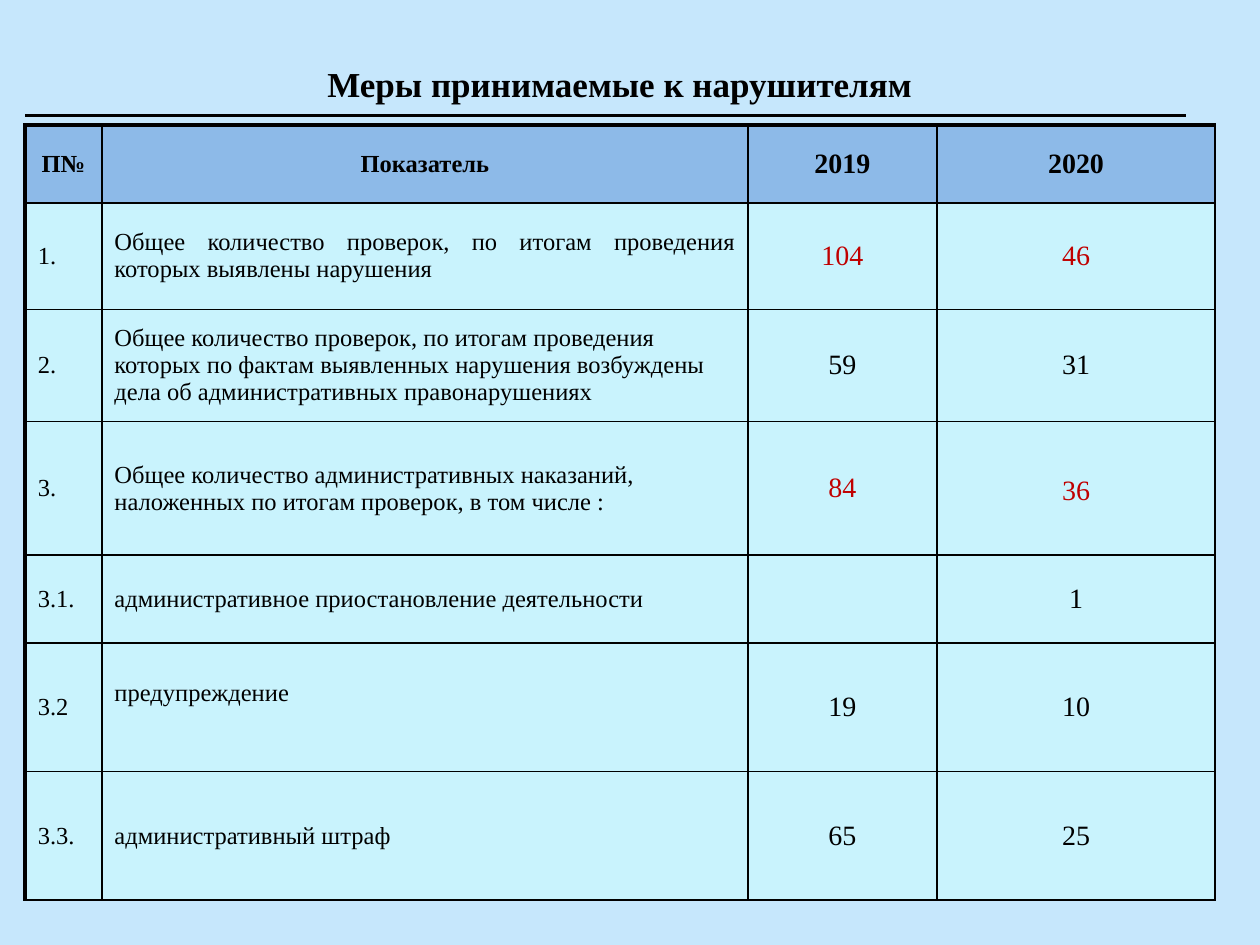
import lxml.etree
import pptx
import pptx.dml.color
import pptx.enum.shapes
import pptx.enum.text
import pptx.oxml.ns
import pptx.util

Pt = pptx.util.Pt
ALIGN = pptx.enum.text.PP_ALIGN
MIDDLE = pptx.enum.text.MSO_ANCHOR.MIDDLE
qn = pptx.oxml.ns.qn

COLORS = {
    "background": "C6E7FC",
    "ink": "000000",
    "accent": "C00000",
    "header": "558ED5",
    "body": "CCFFFF",
}
COLUMN_WIDTHS = [43.8, 369.2, 108, 159]
ROW_HEIGHTS = [44.6, 60.8, 64.2, 76.3, 50.3, 73.4, 73.4]
ROWS = [
    ["П№", "Показатель", "2019", "2020"],
    ["1.", "Общее количество проверок, по итогам проведения которых выявлены нарушения", "104", "46"],
    ["2.", "Общее количество проверок, по итогам проведения которых по фактам выявленных "
           "нарушения возбуждены дела об административных правонарушениях", "59", "31"],
    ["3.", "Общее количество административных наказаний, наложенных по итогам проверок, "
           "в том числе :", "84", "36"],
    ["3.1.", "административное приостановление деятельности", "", "1"],
    ["3.2", "предупреждение", "19", "10"],
    ["3.3.", "административный штраф", "65", "25"],
]
ACCENT_ROWS = (1, 3)


class SlideBuilder:
    font = "Times New Roman"
    thin, thick = 1, 2.25

    def __init__(self, slide):
        self.slide = slide

    def color(self, name):
        return pptx.dml.color.RGBColor.from_string(COLORS[name])

    def background(self, name):
        fill = self.slide.background.fill
        fill.solid()
        fill.fore_color.rgb = self.color(name)

    def set_text(self, text_frame, text, size, align, color="ink", bold=False):
        text_frame.text = text
        text_frame.word_wrap = True
        paragraph = text_frame.paragraphs[0]
        paragraph.alignment = align
        for run in paragraph.runs:
            run.font.name = self.font
            run.font.size = Pt(size)
            run.font.bold = bold
            run.font.color.rgb = self.color(color)

    def title(self, text, left, top, width, height):
        shape = self.slide.shapes.add_textbox(Pt(left), Pt(top), Pt(width), Pt(height))
        text_frame = shape.text_frame
        self.set_text(text_frame, text, 20, ALIGN.CENTER, bold=True)
        text_frame.vertical_anchor = MIDDLE
        text_frame.margin_right = Pt(13.6)
        text_frame.margin_bottom = Pt(23)

    def rule(self, left, right, y):
        connector = self.slide.shapes.add_connector(
            pptx.enum.shapes.MSO_CONNECTOR.STRAIGHT, Pt(left), Pt(y), Pt(right), Pt(y))
        connector.line.color.rgb = self.color("ink")
        connector.line.width = Pt(2)
        lxml.etree.SubElement(connector._element.spPr, qn("a:effectLst"))

    def fill_cell(self, cell, name):
        cell.fill.solid()
        cell.fill.fore_color.rgb = self.color(name)
        rgb = cell._tc.tcPr.find(qn("a:solidFill")).find(qn("a:srgbClr"))
        lxml.etree.SubElement(rgb, qn("a:alpha")).set("val", "50000")

    def border_cell(self, cell, left, top):
        properties = cell._tc.get_or_add_tcPr()
        widths = {"a:lnL": left, "a:lnR": self.thin, "a:lnT": top, "a:lnB": self.thin}
        for index, (tag, width) in enumerate(widths.items()):
            line = lxml.etree.Element(qn(tag), w=str(int(Pt(width))))
            solid = lxml.etree.SubElement(line, qn("a:solidFill"))
            lxml.etree.SubElement(solid, qn("a:srgbClr")).set("val", COLORS["ink"])
            properties.insert(index, line)

    def table(self, rows, left, top):
        frame = self.slide.shapes.add_table(
            len(rows), len(COLUMN_WIDTHS), Pt(left), Pt(top),
            Pt(sum(COLUMN_WIDTHS)), Pt(sum(ROW_HEIGHTS)))
        table = frame.table
        for column, width in zip(table.columns, COLUMN_WIDTHS):
            column.width = Pt(width)
        for row, height in zip(table.rows, ROW_HEIGHTS):
            row.height = Pt(height)
        for row_index, values in enumerate(rows):
            header = row_index == 0
            for column_index, text in enumerate(values):
                cell = table.cell(row_index, column_index)
                number = column_index >= 2
                accent = number and row_index in ACCENT_ROWS
                self.set_text(cell.text_frame, text, 16 if number else 14,
                              ALIGN.CENTER if header or number else ALIGN.LEFT,
                              "accent" if accent else "ink", header)
                cell.vertical_anchor = MIDDLE
                self.fill_cell(cell, "header" if header else "body")
                self.border_cell(cell, self.thin if column_index else self.thick,
                                 self.thick if header else self.thin)
        return table


def main():
    presentation = pptx.Presentation()
    presentation.slide_width, presentation.slide_height = Pt(720), Pt(540)
    builder = SlideBuilder(presentation.slides.add_slide(presentation.slide_layouts[6]))
    builder.background("background")

    # Heading and the rule below it
    builder.title("Меры принимаемые к нарушителям", 14.4, 26, 686, 62.6)
    builder.rule(14.4, 677.5, 66)

    # Table of measures, with three cells set apart
    table = builder.table(ROWS, 14.4, 71.4)
    table.cell(1, 1).text_frame.paragraphs[0].alignment = ALIGN.JUSTIFY
    table.cell(3, 3).margin_top = Pt(7)
    table.cell(5, 1).margin_bottom = Pt(19.6)

    presentation.save("out.pptx")


if __name__ == "__main__":
    main()
